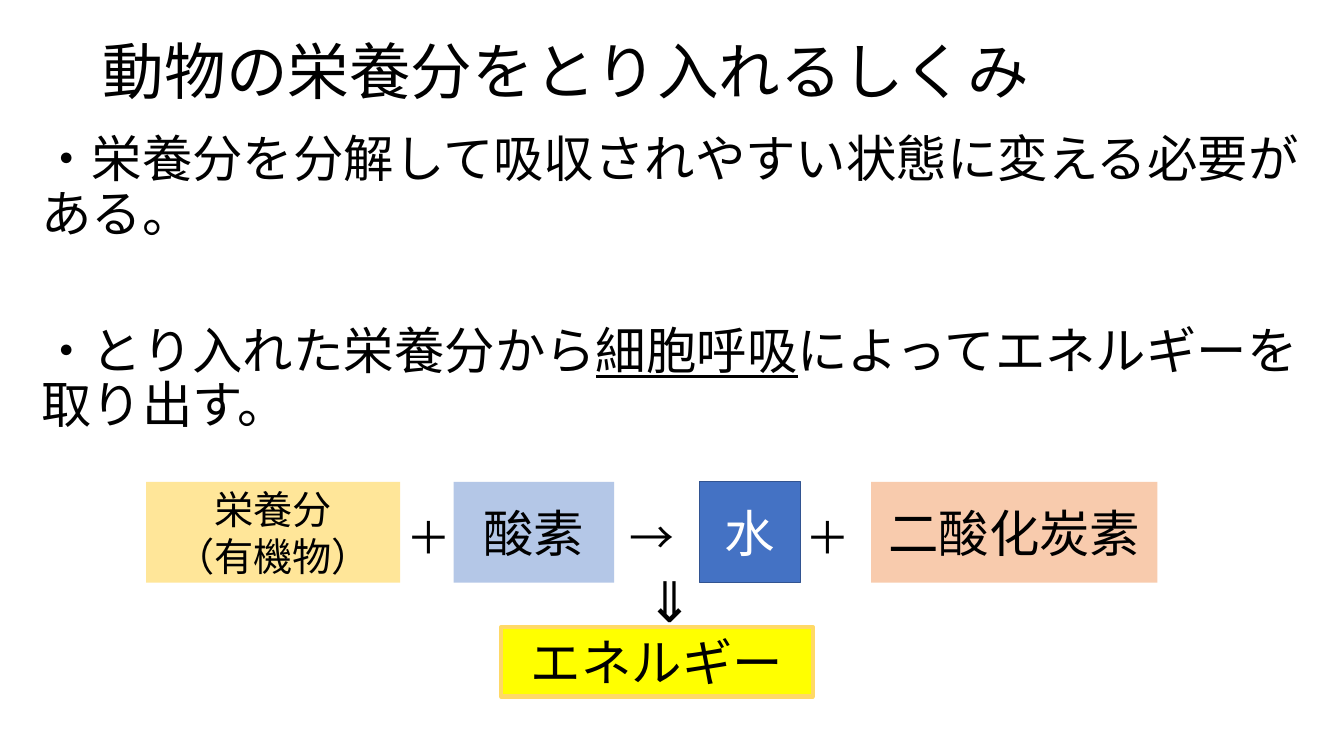
from dataclasses import dataclass

from lxml import etree
from pptx import Presentation
from pptx.dml.color import RGBColor
from pptx.enum.shapes import MSO_SHAPE
from pptx.enum.text import MSO_ANCHOR, MSO_AUTO_SIZE, PP_ALIGN
from pptx.oxml.ns import qn
from pptx.util import Inches, Pt

RECTANGLE = MSO_SHAPE.RECTANGLE
MIDDLE, TOP = MSO_ANCHOR.MIDDLE, MSO_ANCHOR.TOP
NO_AUTOFIT = MSO_AUTO_SIZE.NONE
LEFT, CENTER = PP_ALIGN.LEFT, PP_ALIGN.CENTER


@dataclass(frozen=True)
class Theme:
    font: str = "Noto Sans CJK JP"
    black: str = "000000"
    white: str = "FFFFFF"
    nutrient: str = "FFE699"
    oxygen: str = "B4C7E7"
    water: str = "4472C4"
    water_edge: str = "325491"
    carbon: str = "F8CBAD"
    energy: str = "FFFF00"
    energy_edge: str = "FFD966"
    title_size: int = 44
    body_size: int = 36
    small_size: int = 28
    operator_size: int = 32
    arrow_size: int = 40


theme = Theme()


def add_run(paragraph, text, size, color=theme.black, underline=None):
    run = paragraph.add_run()
    run.text = text
    run.font.name = theme.font
    run.font.size = Pt(size)
    run.font.underline = underline
    run.font.color.rgb = RGBColor.from_string(color)
    east_asian = etree.SubElement(run.font._element, qn("a:ea"))
    east_asian.set("typeface", theme.font)


def prepare_frame(frame, anchor):
    frame.word_wrap = True
    frame.auto_size = NO_AUTOFIT
    frame.vertical_anchor = anchor


deck = Presentation()
deck.slide_width, deck.slide_height = Inches(13.33), Inches(7.5)
slide = deck.slides.add_slide(deck.slide_layouts[1])

heading = slide.shapes.title
heading.left, heading.top = Inches(0.92), Inches(-0.01)
heading.width, heading.height = Inches(11.5), Inches(1.5)
prepare_frame(heading.text_frame, MIDDLE)
heading_line = heading.text_frame.paragraphs[0]
heading_line.alignment = LEFT
heading_line.line_spacing = 0.9
add_run(heading_line, "動物の栄養分をとり入れるしくみ", theme.title_size)

explanation = slide.placeholders[1]
explanation.left, explanation.top = Inches(0.31), Inches(1.28)
explanation.width, explanation.height = Inches(12.72), Inches(5.6)
prepare_frame(explanation.text_frame, TOP)
points = [
    (0, [("・栄養分を分解して吸収されやすい状態に変える必要がある。", None)]),
    (59, [("・とり入れた栄養分から", None), ("細胞呼吸", True),
          ("によってエネルギーを取り出す。", None)]),
]
for index, (gap, phrases) in enumerate(points):
    frame = explanation.text_frame
    point = frame.add_paragraph() if index else frame.paragraphs[0]
    point.line_spacing = 0.9
    point.space_before = Pt(gap)
    properties = point._p.get_or_add_pPr()
    properties.set("marL", "0")
    properties.set("indent", "0")
    etree.SubElement(properties, qn("a:buNone"))
    for phrase, underline in phrases:
        add_run(point, phrase, theme.body_size, underline=underline)

equation_top, equation_height = 4.78, 1
substances = [
    (["栄養分", "（有機物）"], 1.45, equation_top, 2.52, equation_height,
     theme.nutrient, None, 0, theme.black, theme.small_size),
    (["酸素"], 4.5, equation_top, 1.59, equation_height,
     theme.oxygen, None, 0, theme.black, theme.body_size),
    (["水"], 6.94, equation_top, 1, equation_height,
     theme.water, theme.water_edge, 1, theme.white, theme.body_size),
    (["二酸化炭素"], 8.64, equation_top, 2.84, equation_height,
     theme.carbon, None, 0, theme.black, theme.body_size),
    (["エネルギー"], 4.97, 6.22, 3.09, 0.69,
     theme.energy, theme.energy_edge, 3, theme.black, theme.body_size),
]
for lines, left, top, width, height, fill, edge, weight, color, size in substances:
    substance = slide.shapes.add_shape(
        RECTANGLE, Inches(left), Inches(top), Inches(width), Inches(height))
    substance.shadow.inherit = False
    substance.fill.solid()
    substance.fill.fore_color.rgb = RGBColor.from_string(fill)
    if edge:
        substance.line.color.rgb = RGBColor.from_string(edge)
        substance.line.width = Pt(weight)
    else:
        substance.line.fill.background()
    frame = substance.text_frame
    prepare_frame(frame, MIDDLE)
    for index, text in enumerate(lines):
        label = frame.add_paragraph() if index else frame.paragraphs[0]
        label.alignment = CENTER
        add_run(label, text, size, color)

symbol_width = 0.64
symbols = [
    ("＋", 4.25, 5.01, 0.64, theme.operator_size),
    ("→", 6.47, 5.01, 0.64, theme.operator_size),
    ("＋", 8.21, 5.01, 0.64, theme.operator_size),
    ("⇓", 6.64, 5.57, 0.77, theme.arrow_size),
]
for sign, center, top, height, size in symbols:
    symbol = slide.shapes.add_textbox(
        Inches(center - symbol_width / 2), Inches(top),
        Inches(symbol_width), Inches(height))
    frame = symbol.text_frame
    prepare_frame(frame, TOP)
    frame.margin_left = frame.margin_right = 0
    frame.paragraphs[0].alignment = CENTER
    add_run(frame.paragraphs[0], sign, size)

deck.save("out.pptx")
